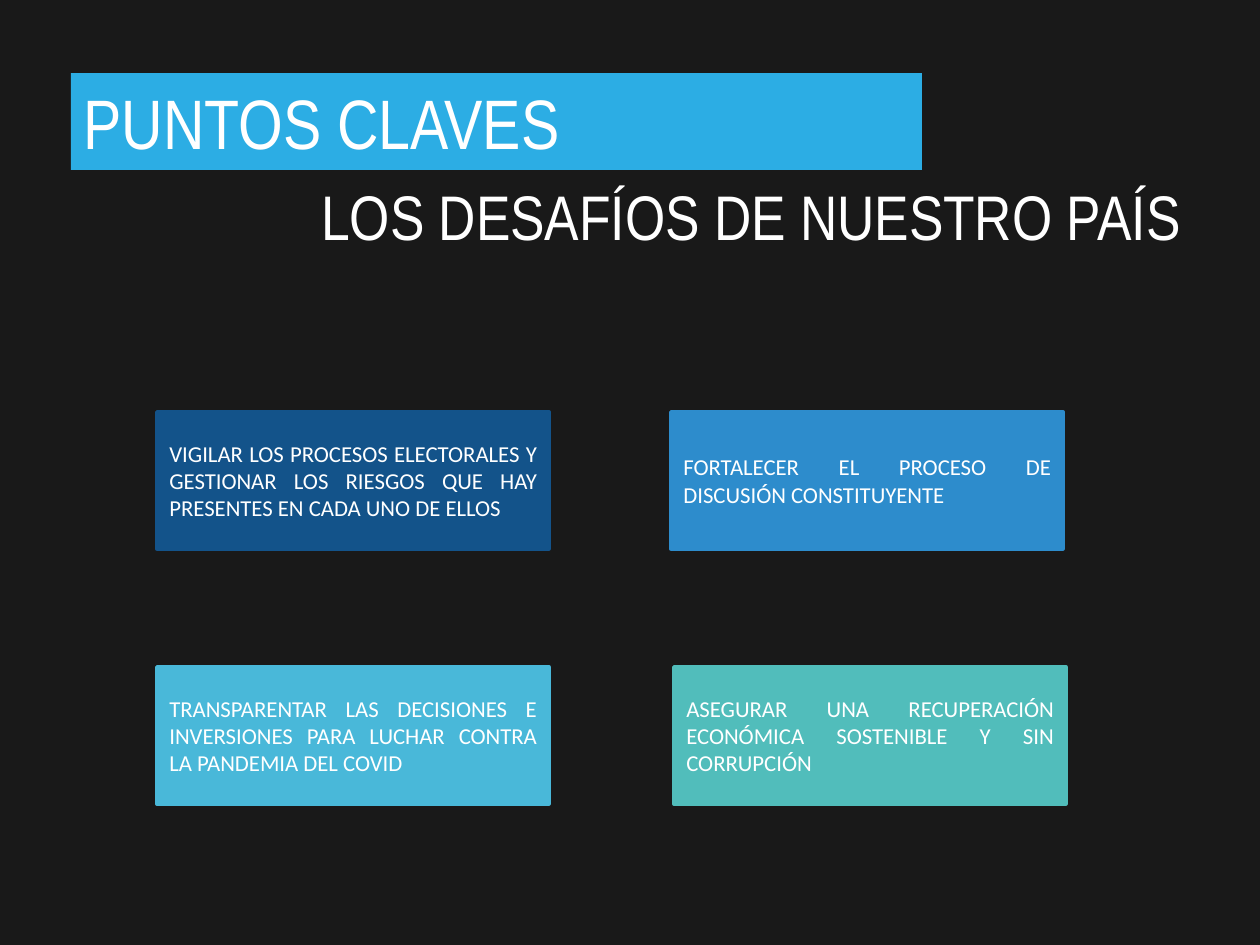
from pptx import Presentation
from pptx.dml.color import RGBColor
from pptx.enum.shapes import MSO_SHAPE
from pptx.enum.text import MSO_ANCHOR as ANCHOR, MSO_AUTO_SIZE as AUTO, PP_ALIGN as ALIGN
from pptx.util import Emu, Pt

THEME = {
    "bg": "191919", "text": "FFFFFF", "banner": "2CADE4",
    "head_font": "Arial Narrow", "body_font": "Calibri",
    "title": 40, "subtitle": 36, "card": 13, "border": 2,
}
SCALE = 914400 / 126  # EMU per px


def place(sp, *box):
    for name, px in zip(("left", "top", "width", "height"), box):
        setattr(sp, name, Emu(round(px * SCALE)))


def write(sp, text, font, size, align, anchor):
    tf = sp.text_frame
    for name, value in {"word_wrap": True, "auto_size": AUTO.NONE,
                        "vertical_anchor": anchor}.items():
        setattr(tf, name, value)
    p = tf.paragraphs[0]
    for name, value in {"alignment": align, "space_before": Pt(0)}.items():
        setattr(p, name, value)
    r = p.add_run()
    r.text = text
    for name, value in {"name": font, "size": Pt(size), "bold": False}.items():
        setattr(r.font, name, value)
    r.font.color.rgb = RGBColor.from_string(THEME["text"])


# Slide and background
prs = Presentation()
prs.slide_width, prs.slide_height = Emu(round(1260 * SCALE)), Emu(round(945 * SCALE))
s = prs.slides.add_slide(prs.slide_layouts[0])
s.background.fill.solid()
s.background.fill.fore_color.rgb = RGBColor.from_string(THEME["bg"])

# Title banner and subtitle
title, subtitle = s.placeholders
place(title, 71, 73, 851, 97)
title.fill.solid()
title.fill.fore_color.rgb = RGBColor.from_string(THEME["banner"])
write(title, "PUNTOS CLAVES", THEME["head_font"], THEME["title"], ALIGN.LEFT, ANCHOR.TOP)
place(subtitle, 107, 171, 1087, 89)
write(subtitle, "LOS DESAFÍOS DE NUESTRO PAÍS", THEME["head_font"], THEME["subtitle"],
      ALIGN.RIGHT, ANCHOR.TOP)

# Key point cards: left, top, colour, text
CARD_W, CARD_H = 392, 137
ROW_1, ROW_2 = 412, 667
cards = [
    (157, ROW_1, "13538A", "VIGILAR LOS PROCESOS ELECTORALES Y GESTIONAR LOS RIESGOS "
                           "QUE HAY PRESENTES EN CADA UNO DE ELLOS"),
    (671, ROW_1, "2D8CCC", "FORTALECER EL PROCESO DE DISCUSIÓN CONSTITUYENTE"),
    (157, ROW_2, "49B8D9", "TRANSPARENTAR LAS DECISIONES E INVERSIONES PARA LUCHAR "
                           "CONTRA LA PANDEMIA DEL COVID"),
    (674, ROW_2, "51BDBB", "ASEGURAR UNA RECUPERACIÓN ECONÓMICA SOSTENIBLE Y SIN CORRUPCIÓN"),
]
for left, top, colour, text in cards:
    sp = s.shapes.add_shape(MSO_SHAPE.RECTANGLE, 0, 0, 0, 0)
    place(sp, left, top, CARD_W, CARD_H)
    sp.shadow.inherit = False
    sp.fill.solid()
    for fmt in (sp.fill.fore_color, sp.line.color):
        fmt.rgb = RGBColor.from_string(colour)
    sp.line.width = Pt(THEME["border"])
    write(sp, text, THEME["body_font"], THEME["card"], ALIGN.JUSTIFY, ANCHOR.MIDDLE)

prs.save("out.pptx")
